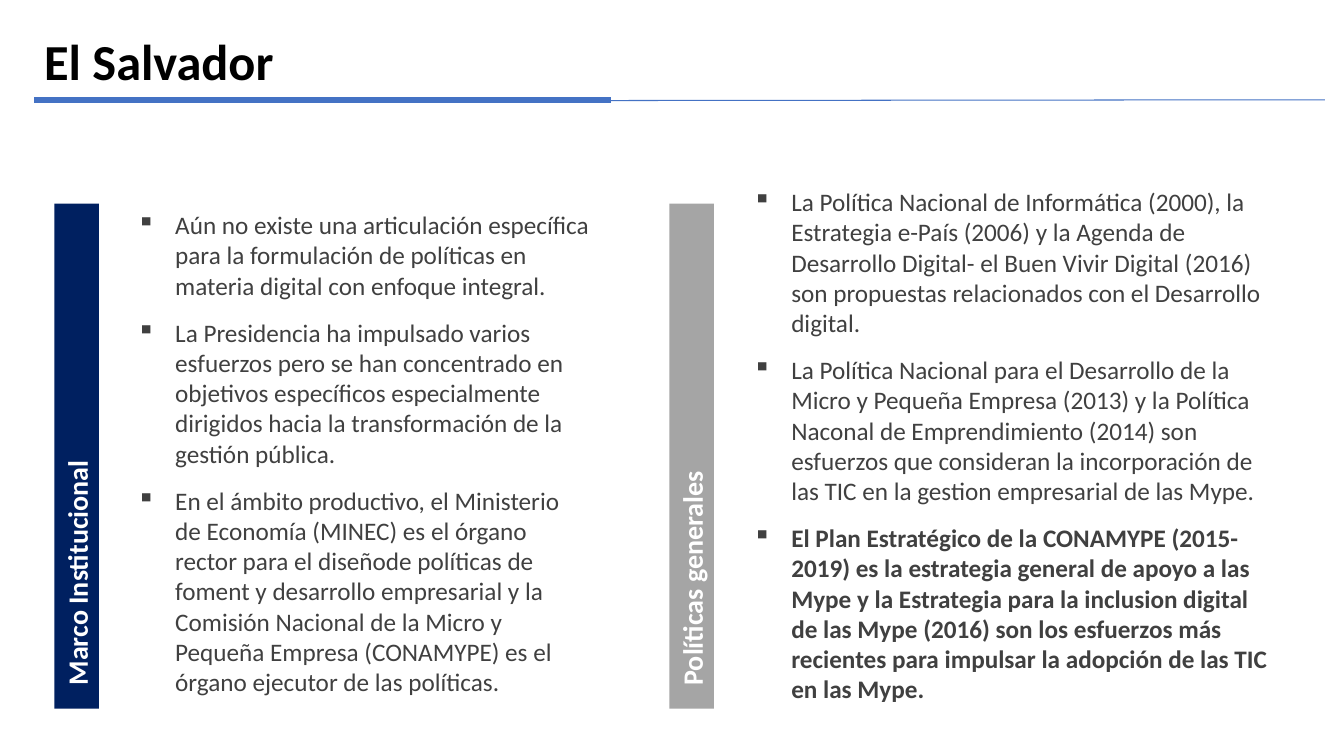
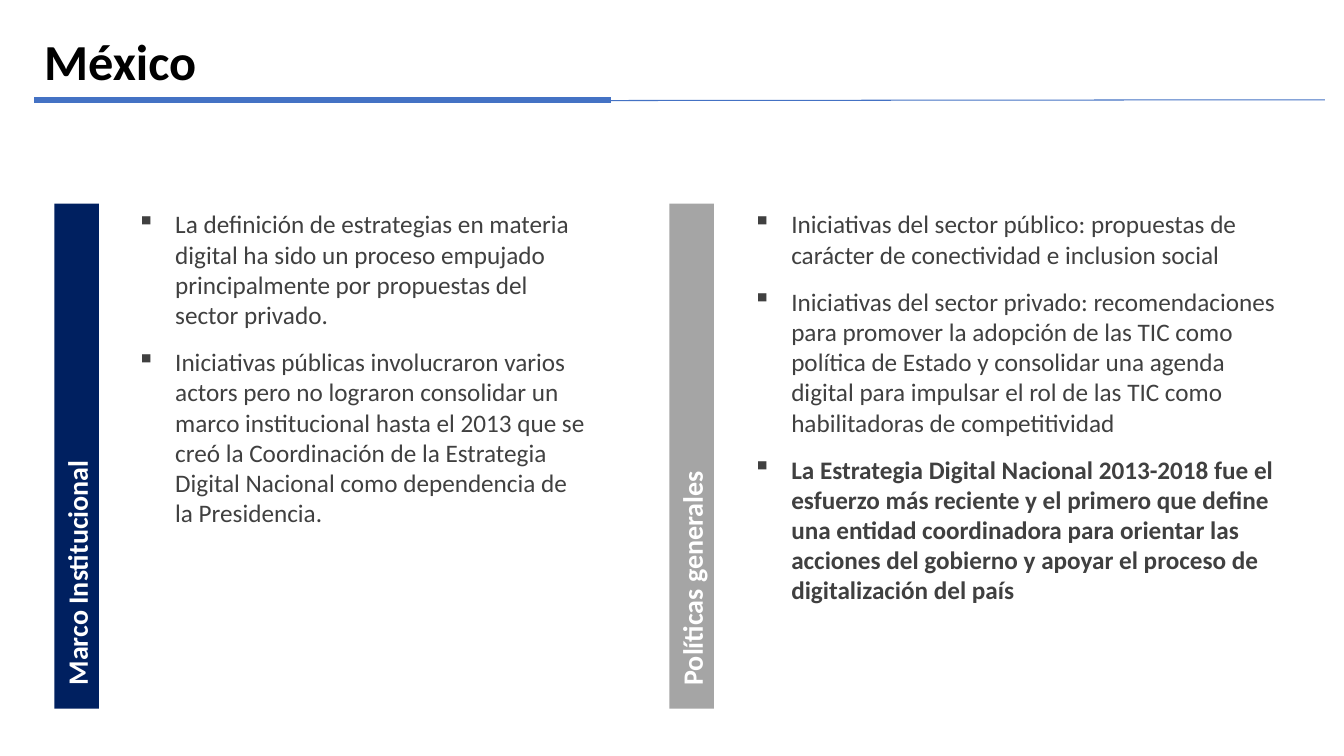
"""Build two country slides comparing institutional framework and general policies."""
from dataclasses import dataclass

from lxml import etree
from pptx import Presentation
from pptx.dml.color import RGBColor
from pptx.enum.shapes import MSO_CONNECTOR, MSO_SHAPE
from pptx.enum.text import MSO_ANCHOR, PP_ALIGN
from pptx.oxml.ns import qn
from pptx.util import Inches, Pt

RECTANGLE = MSO_SHAPE.RECTANGLE
STRAIGHT = MSO_CONNECTOR.STRAIGHT
TOP, MIDDLE = MSO_ANCHOR.TOP, MSO_ANCHOR.MIDDLE
LEFT = PP_ALIGN.LEFT


@dataclass(frozen=True)
class Theme:
    font: str = "Calibri"
    title: RGBColor = RGBColor(0x00, 0x00, 0x00)
    body: RGBColor = RGBColor(0x40, 0x40, 0x40)
    label: RGBColor = RGBColor(0xFF, 0xFF, 0xFF)
    navy: RGBColor = RGBColor(0x00, 0x20, 0x60)
    gray: RGBColor = RGBColor(0xA5, 0xA5, 0xA5)
    rule: RGBColor = RGBColor(0x44, 0x72, 0xC4)
    title_size: int = 36
    label_size: int = 20
    body_size: int = 18


THEME = Theme()
BAR_LENGTH, BAR_THICKNESS, BAR_TOP = 5.01, 0.44, 2.02
BAR_BOTTOM = BAR_TOP + BAR_LENGTH
BULLET_INDENT = Inches(0.38)

COLUMNS = [
    {"label": "Marco Institucional", "fill": THEME.navy, "bar_left": 0.54, "text_left": 1.26, "width": 4.7},
    {"label": "Políticas generales", "fill": THEME.gray, "bar_left": 6.64, "text_left": 7.37, "width": 5.4},
]
RULES = [
    (0.34, 0.99, 6.06, 0.99, 4.5),
    (3.61, 1, 13.14, 0.99, 0.75),
]
COUNTRIES = [
    {
        "name": "El Salvador",
        "tops": (2.03, 1.8),
        "texts": (
            [
                "Aún no existe una articulación específica para la formulación de políticas en materia digital con enfoque integral.",
                "La Presidencia ha impulsado varios esfuerzos pero se han concentrado en objetivos específicos especialmente dirigidos hacia la transformación de la gestión pública.",
                "En el ámbito productivo, el Ministerio de Economía (MINEC) es el órgano rector para el diseñode políticas de foment y desarrollo empresarial y la Comisión Nacional de la Micro y Pequeña Empresa (CONAMYPE) es el órgano ejecutor de las políticas.",
            ],
            [
                "La Política Nacional de Informática (2000), la Estrategia e-País (2006) y la Agenda de Desarrollo Digital- el Buen Vivir Digital (2016) son propuestas relacionados con el Desarrollo digital.",
                "La Política Nacional para el Desarrollo de la Micro y Pequeña Empresa (2013) y la Política Naconal de Emprendimiento (2014) son esfuerzos que consideran la incorporación de las TIC en la gestion empresarial de las Mype.",
                "El Plan Estratégico de la CONAMYPE (2015-2019) es la estrategia general de apoyo a las Mype y la Estrategia para la inclusion digital de las Mype (2016) son los esfuerzos más recientes para impulsar la adopción de las TIC en las Mype.",
            ],
        ),
        "highlight": "El Plan Estratégico",
    },
    {
        "name": "México",
        "tops": (2.02, 2.02),
        "texts": (
            [
                "La definición de estrategias en materia digital ha sido un proceso empujado principalmente por propuestas del sector privado.",
                "Iniciativas públicas involucraron varios actors pero no lograron consolidar un marco institucional hasta el 2013 que se creó la Coordinación de la Estrategia Digital Nacional como dependencia de la Presidencia.",
            ],
            [
                "Iniciativas del sector público: propuestas de carácter de conectividad e inclusion social",
                "Iniciativas del sector privado: recomendaciones para promover la adopción de las TIC como política de Estado y consolidar una agenda digital para impulsar el rol de las TIC como habilitadoras de competitividad",
                "La Estrategia Digital Nacional 2013-2018 fue el esfuerzo más reciente y el primero que define una entidad coordinadora para orientar las acciones del gobierno y apoyar el proceso de digitalización del país",
            ],
        ),
        "highlight": "La Estrategia Digital",
    },
]


def write_text(shape, texts, *, size, color, bold_start=None, anchor=MIDDLE, bullet=None):
    """Write paragraphs, bolding those that begin with bold_start."""
    frame = shape.text_frame
    frame.word_wrap = True
    frame.vertical_anchor = anchor
    for index, text in enumerate(texts):
        paragraph = frame.add_paragraph() if index else frame.paragraphs[0]
        paragraph.alignment = LEFT
        run = paragraph.add_run()
        run.text = text
        run.font.name = THEME.font
        run.font.size = Pt(size)
        run.font.color.rgb = color
        run.font.bold = bold_start is not None and text.startswith(bold_start)
        if bullet:
            paragraph.space_after = Pt(12)
            properties = paragraph._p.get_or_add_pPr()
            properties.set("marL", str(BULLET_INDENT))
            properties.set("indent", str(-BULLET_INDENT))
            etree.SubElement(properties, qn("a:buChar")).set("char", bullet)


presentation = Presentation()
presentation.slide_width = Inches(13.33)
presentation.slide_height = Inches(7.5)
blank_layout = presentation.slide_layouts[6]

for country in COUNTRIES:
    slide = presentation.slides.add_slide(blank_layout)

    title = slide.shapes.add_textbox(Inches(0.34), Inches(0.2), Inches(12.66), Inches(0.79))
    write_text(title, [country["name"]], size=THEME.title_size, color=THEME.title, bold_start="")

    title_rules = slide.shapes.add_group_shape()
    for start_x, start_y, end_x, end_y, weight in RULES:
        rule = title_rules.shapes.add_connector(
            STRAIGHT, Inches(start_x), Inches(start_y), Inches(end_x), Inches(end_y))
        rule.line.color.rgb = THEME.rule
        rule.line.width = Pt(weight)
        etree.SubElement(rule._element.spPr, qn("a:effectLst"))

    for column, top, texts in zip(COLUMNS, country["tops"], country["texts"]):
        bar_left = column["bar_left"] + (BAR_THICKNESS - BAR_LENGTH) / 2
        bar_top = BAR_TOP + (BAR_LENGTH - BAR_THICKNESS) / 2
        bar = slide.shapes.add_shape(
            RECTANGLE, Inches(bar_left), Inches(bar_top), Inches(BAR_LENGTH), Inches(BAR_THICKNESS))
        bar.rotation = 270
        bar.shadow.inherit = False
        bar.fill.solid()
        bar.fill.fore_color.rgb = column["fill"]
        bar.line.fill.background()
        bar.text_frame.margin_left = Inches(0.23)
        write_text(bar, [column["label"]], size=THEME.label_size, color=THEME.label, bold_start="")

        body = slide.shapes.add_textbox(
            Inches(column["text_left"]), Inches(top), Inches(column["width"]), Inches(BAR_BOTTOM - top))
        write_text(body, texts, size=THEME.body_size, color=THEME.body,
                   bold_start=country["highlight"], anchor=TOP, bullet="▪")

presentation.save("out.pptx")
